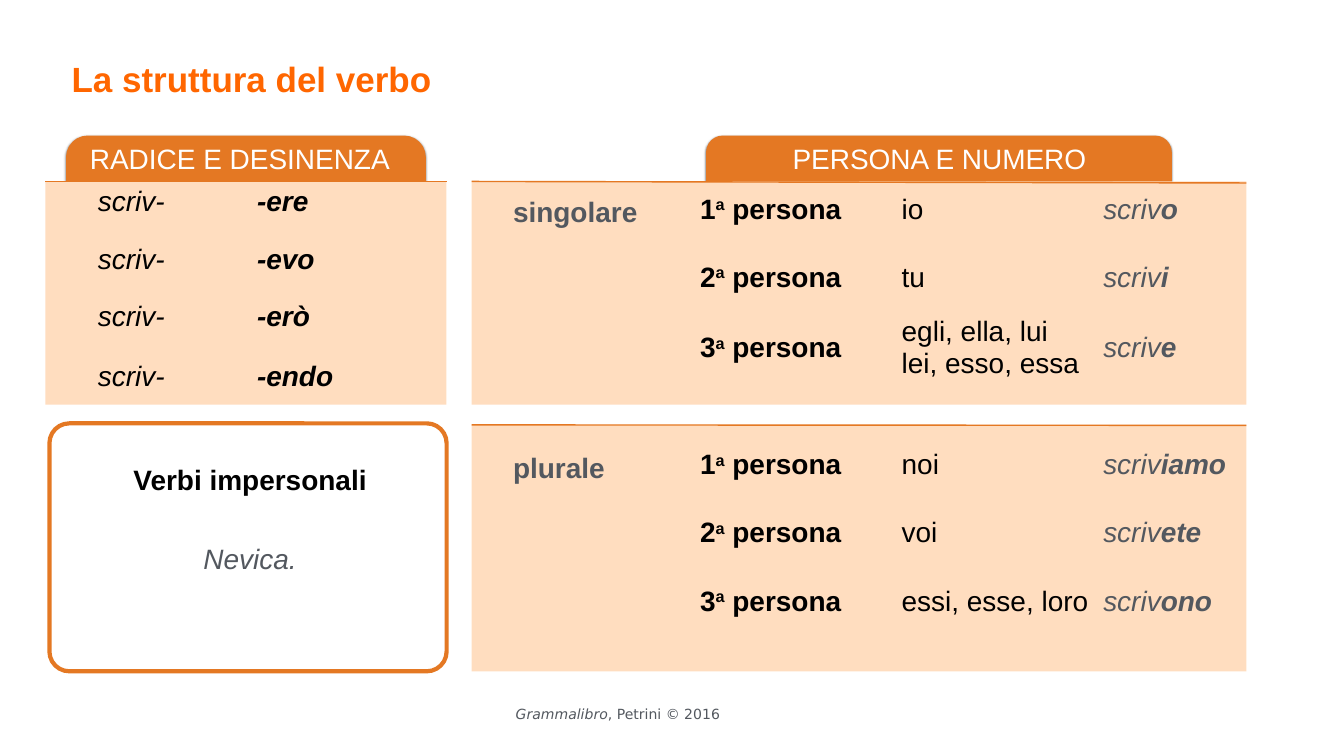
import pptx
import pptx.util
import pptx.dml.color
import pptx.enum.shapes
import pptx.enum.text
import pptx.oxml
import pptx.oxml.ns
from pptx.util import Pt

COLORS = {"title": "FF6600", "tab": "E47823", "panel": "FFDDBF",
          "grey": "53585F", "black": "000000", "white": "FFFFFF"}
SHADOW = ('<a:effectLst %s><a:outerShdw blurRad="38100" dist="25400" dir="5400000">'
          '<a:srgbClr val="000000"><a:alpha val="50000"/></a:srgbClr>'
          '</a:outerShdw></a:effectLst>') % pptx.oxml.ns.nsdecls("a")
NO_EFFECT = "<a:effectLst %s/>" % pptx.oxml.ns.nsdecls("a")
SHAPE = pptx.enum.shapes.MSO_SHAPE
MIDDLE = pptx.enum.text.MSO_ANCHOR.MIDDLE
LEFT = pptx.enum.text.PP_ALIGN.LEFT
CENTER = pptx.enum.text.PP_ALIGN.CENTER


def rgb(name):
    return pptx.dml.color.RGBColor.from_string(COLORS[name])


def write(paragraph, parts, color="black", size=40, font="Arial", align=LEFT, spacing=1.0):
    """Add (text, style) parts; style holds b(old), i(talic), s(uperscript)."""
    paragraph.alignment = align
    paragraph.line_spacing = spacing
    for text, style in parts:
        run = paragraph.add_run()
        run.text = text
        run.font.name, run.font.size = font, Pt(size)
        run.font.bold, run.font.italic = "b" in style, "i" in style
        run.font.color.rgb = rgb(color)
        if "s" in style:
            run.font._element.set("baseline", "30000")


deck = pptx.Presentation()
deck.slide_width, deck.slide_height = Pt(1920), Pt(1080)
slide = deck.slides.add_slide(deck.slide_layouts[5])
shapes = slide.shapes

# Title
title = shapes.title
title.left, title.top, title.width, title.height = Pt(98), Pt(72), Pt(739), Pt(73.5)
title.text_frame.vertical_anchor = MIDDLE
title.text_frame.margin_left = Pt(4.3)
write(title.text_frame.paragraphs[0], [("La struttura del verbo", "b")],
      "title", 50, spacing=1.1)

# Header tabs: left, width, height, corner
for left, width, height, corner in [(94.3, 514, 271.5, 0.114), (1008.7, 665.3, 253.5, 0.094)]:
    tab = shapes.add_shape(SHAPE.ROUNDED_RECTANGLE, Pt(left), Pt(193.7), Pt(width), Pt(height))
    tab.adjustments[0] = corner
    tab.fill.solid()
    tab.fill.fore_color.rgb = rgb("tab")
    tab.line.fill.background()
    tab._element.spPr.append(pptx.oxml.parse_xml(SHADOW))

# Panels with a rule along the top: left, top, width, height, fall of the rule
for left, top, width, height, fall in [(64.8, 259.2, 573.1, 319, 0),
                                       (673.9, 259.2, 1106.6, 319, 2.2),
                                       (673.9, 607, 1106.6, 352, 0.7)]:
    panel = shapes.add_shape(SHAPE.RECTANGLE, Pt(left), Pt(top), Pt(width), Pt(height))
    panel.shadow.inherit = False
    panel.fill.solid()
    panel.fill.fore_color.rgb = rgb("panel")
    panel.line.fill.background()
    rule = shapes.add_connector(pptx.enum.shapes.MSO_CONNECTOR.STRAIGHT,
                                Pt(left), Pt(top), Pt(left + width), Pt(top + fall))
    rule.line.color.rgb = rgb("tab")
    rule.line.width = Pt(2)
    rule._element.spPr.append(pptx.oxml.parse_xml(NO_EFFECT))

# Tab headings
for heading, left, width in [("RADICE E DESINENZA", 98.6, 488.2),
                             ("PERSONA E NUMERO", 1060.6, 563)]:
    heading_box = shapes.add_textbox(Pt(left), Pt(193.7), Pt(width), Pt(59.8))
    heading_box.text_frame.word_wrap = True
    write(heading_box.text_frame.paragraphs[0], [(heading, "")], "white",
          align=CENTER, spacing=1.1)

# Number labels
for number, top in [("singolare", 265.7), ("plurale", 630.7)]:
    number_box = shapes.add_textbox(Pt(728.6), Pt(top), Pt(244.8), Pt(64))
    number_box.text_frame.word_wrap = True
    number_box.text_frame.vertical_anchor = MIDDLE
    number_box.text_frame.margin_left = Pt(4.3)
    write(number_box.text_frame.paragraphs[0], [(number, "b")], "grey", spacing=1.2)

# Tables: each cell is (lines, color, spacing), each line a list of parts
conjugations = [
    (250.6, [("io", "o"), ("tu", "i"), ("egli, ella, lui\nlei, esso, essa", "e")]),
    (615.6, [("noi", "iamo"), ("voi", "ete"), ("essi, esse, loro", "ono")]),
]
tables = []
for top, persons in conjugations:
    rows = []
    for person, (pronouns, ending) in enumerate(persons, start=1):
        rows.append([
            ([[(str(person), "b"), ("a", "bs"), (" persona", "b")]], "black", 1.0),
            ([[(line, "")] for line in pronouns.split("\n")], "black", 1.0),
            ([[("scriv", "i"), (ending, "bi")]], "grey", 1.0)])
    tables.append((992.9, top, [288, 288, 288], 97.4, rows))

stems = [[([[("scriv-", "i")]], "black", spacing), ([[(ending, "bi")]], "black", spacing)]
         for ending, spacing in [("-ere", 0.7), ("-evo", 0.7), ("-erò", 0.7), ("-endo", 1.0)]]
tables.append((132.5, 252.7, [227.5, 252.7], 81.5, stems))

for left, top, widths, row_height, rows in tables:
    table = shapes.add_table(len(rows), len(widths), Pt(left), Pt(top),
                             Pt(sum(widths)), Pt(row_height * len(rows))).table
    table.first_row = table.horz_banding = False
    for column, width in zip(table.columns, widths):
        column.width = Pt(width)
    for r, row in enumerate(rows):
        table.rows[r].height = Pt(row_height)
        for c, (lines, color, spacing) in enumerate(row):
            cell = table.cell(r, c)
            cell.fill.background()
            cell.vertical_anchor = MIDDLE
            for n, parts in enumerate(lines):
                paragraph = cell.text_frame.add_paragraph() if n else cell.text_frame.paragraphs[0]
                write(paragraph, parts, color, spacing=spacing)
            # The table style's inner borders stay hidden
            for edge in ("lnB", "lnT", "lnR", "lnL"):
                cell._tc.get_or_add_tcPr().insert(0, pptx.oxml.parse_xml(
                    "<a:%s %s><a:noFill/></a:%s>" % (edge, pptx.oxml.ns.nsdecls("a"), edge)))

# Impersonal verbs
frame = shapes.add_shape(SHAPE.ROUNDED_RECTANGLE, Pt(70.6), Pt(604.8), Pt(567.4), Pt(354.2))
frame.adjustments[0] = 0.08
frame.shadow.inherit = False
frame.fill.background()
frame.line.color.rgb = rgb("tab")
frame.line.width = Pt(6)

impersonal = shapes.add_textbox(Pt(124.6), Pt(637.2), Pt(465.1), Pt(231)).text_frame
impersonal.word_wrap = True
impersonal.margin_top = Pt(24)
write(impersonal.paragraphs[0], [("Verbi impersonali", "b")], align=CENTER)
example = impersonal.add_paragraph()
example.space_before = Pt(64)
write(example, [("Nevica.", "i")], "grey", align=CENTER)

# Copyright line
credit = shapes.add_textbox(Pt(727.2), Pt(1010.2), Pt(311), Pt(25.9)).text_frame
credit.word_wrap = False
credit.vertical_anchor = MIDDLE
write(credit.paragraphs[0], [("Grammalibro", "i"), (", Petrini © 2016", "")],
      "grey", 20, "DejaVu Sans", CENTER, 0.7)

deck.save("out.pptx")
